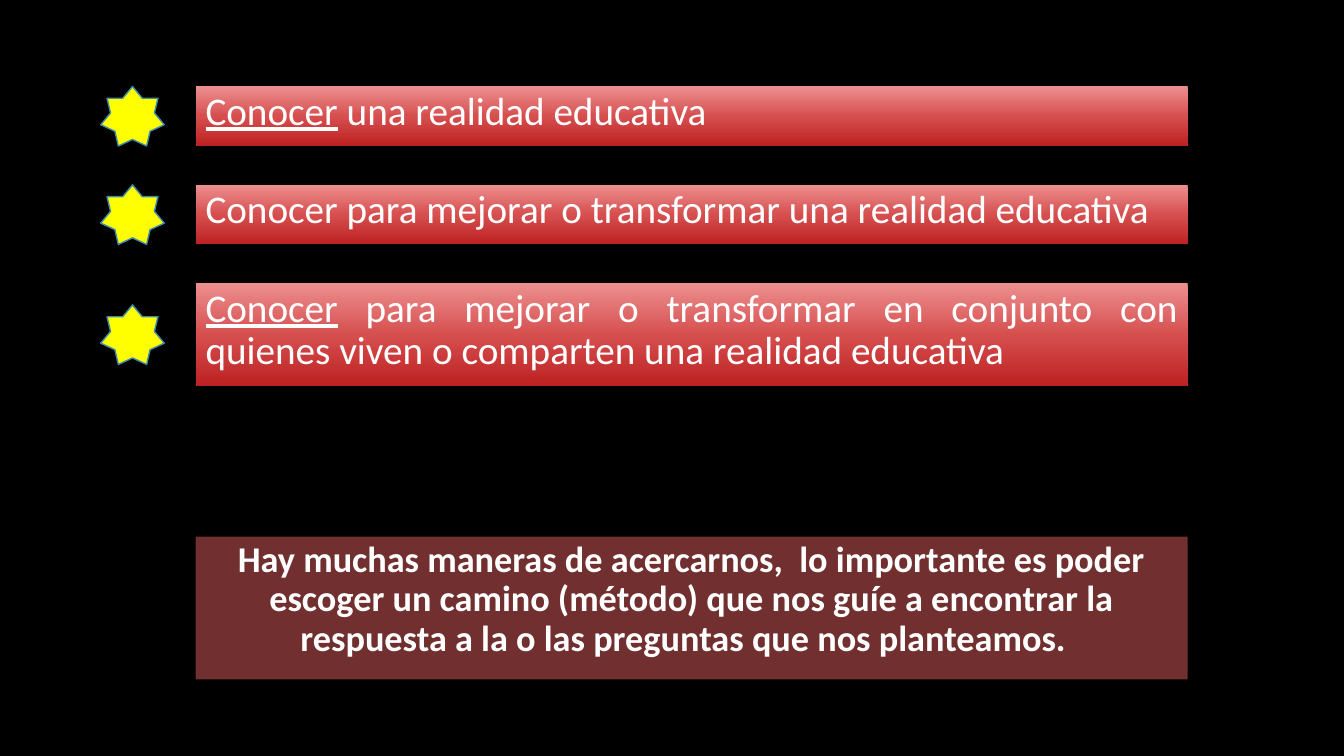
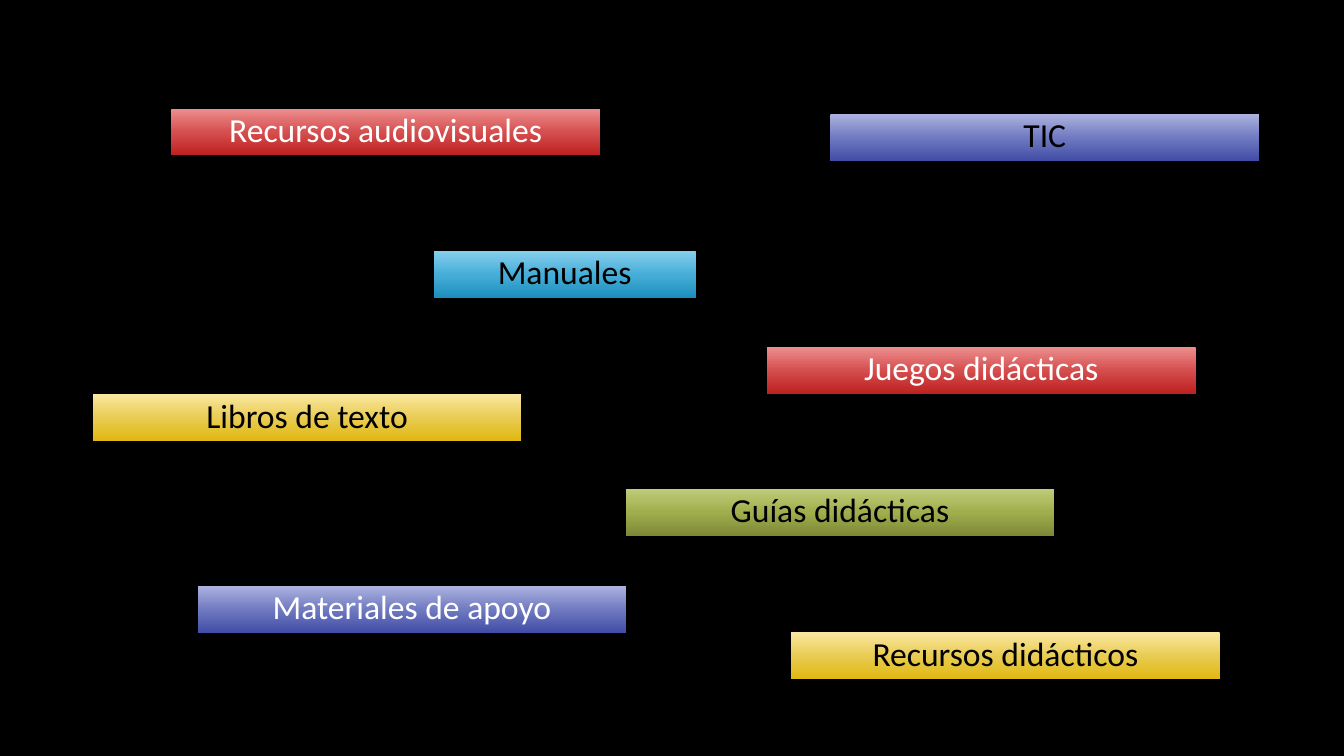
import copy

import lxml.etree
import pptx
import pptx.dml.color
import pptx.enum.shapes
import pptx.enum.text
import pptx.oxml.ns
import pptx.util

Cm = pptx.util.Cm
Pt = pptx.util.Pt
Shape = pptx.enum.shapes.MSO_SHAPE
Align = pptx.enum.text.PP_ALIGN
Fit = pptx.enum.text.MSO_AUTO_SIZE
qn = pptx.oxml.ns.qn

FONT = "Calibri"
BLACK, WHITE = "000000", "FFFFFF"
RED = ("ED8F8F", "D64F4F", "BD2121")
BLUE = ("87D0EE", "47AED8", "1D8FBD")
GOLD = ("FAE8A1", "E9CC54", "E0B810")
GREEN = ("C0CC79", "A0AE4D", "7D8936")
VIOLET = ("ADB3E0", "717BC1", "414DA7")

# Aims slide, in cm
LEFT, WIDTH, TOP, GAP = 4.93, 25, 2.18, 0.98
STAR_LEFT, STAR_W, STAR_H = 2.54, 1.6, 1.5
AIMS = [
    (1.5, "Conocer", " una realidad educativa"),
    (1.5, "", "Conocer para mejorar o transformar una realidad educativa"),
    (2.59, "Conocer", " para mejorar o transformar en conjunto con quienes viven "
                      "o comparten una realidad educativa"),
]
CLOSING = ("Hay muchas maneras de acercarnos,  lo importante es poder escoger un "
           "camino (método) que nos guíe a encontrar la respuesta a la o las "
           "preguntas que nos planteamos.  ")

# Resources slide, in cm: left, top, width, text, gradient, text colour
TAG_W, TAG_H = 10.8, 1.18
TAGS = [
    (4.32, 2.74, TAG_W, "Recursos audiovisuales", RED, WHITE),
    (10.93, 6.32, 6.6, "Manuales", BLUE, BLACK),
    (19.94, 15.93, TAG_W, "Recursos didácticos", GOLD, BLACK),
    (15.77, 12.32, TAG_W, "Guías didácticas", GREEN, BLACK),
    (2.34, 9.93, TAG_W, "Libros de texto", GOLD, BLACK),
    (19.33, 8.74, TAG_W, "Juegos didácticas", RED, WHITE),
    (4.98, 14.76, TAG_W, "Materiales de apoyo", VIOLET, WHITE),
    (20.93, 2.87, TAG_W, "TIC", VIOLET, BLACK),
]


def rgb(code):
    return pptx.dml.color.RGBColor.from_string(code)


def style(item, values):
    for name, value in values.items():
        setattr(item, name, value)


def solid(fill, code):
    fill.solid()
    fill.fore_color.rgb = rgb(code)


def fade(shape, codes):
    """Fill with evenly spaced colours from top to bottom."""
    fill = shape.fill
    fill.gradient()
    fill.gradient_angle = 270
    stops = shape.element.spPr.find(qn("a:gradFill")).find(qn("a:gsLst"))
    while len(stops) < len(codes):
        stops.append(copy.deepcopy(stops[0]))
    for i, (stop, code) in enumerate(zip(fill.gradient_stops, codes)):
        stop.position = i / (len(codes) - 1)
        stop.color.rgb = rgb(code)


def veil(shape, code, part):
    """Fill with a colour at the given percentage of opacity."""
    solid(shape.fill, code)
    color = shape.element.spPr.find(qn("a:solidFill"))[0]
    lxml.etree.SubElement(color, qn("a:alpha"), val=str(part * 1000))


def draw(slide, kind, left, top, width, height):
    shape = slide.shapes.add_shape(kind, Cm(left), Cm(top), Cm(width), Cm(height))
    shape.shadow.inherit = False
    shape.line.fill.background()
    return shape


def write(shape, runs, align, color, font, fit=Fit.NONE):
    """Set one paragraph from pairs of text and run format."""
    frame = shape.text_frame
    style(frame, {"word_wrap": True, "auto_size": fit,
                  "vertical_anchor": pptx.enum.text.MSO_ANCHOR.TOP})
    para = frame.paragraphs[0]
    style(para, {"alignment": align, "line_spacing": 0.9})
    for text, extra in runs:
        run = para.add_run()
        run.text = text
        style(run.font, {"name": FONT, **font, **extra})
        run.font.color.rgb = rgb(color)


def star(slide, middle):
    shape = draw(slide, Shape.STAR_7_POINT, STAR_LEFT, middle - STAR_H / 2,
                 STAR_W, STAR_H)
    solid(shape.fill, "FFFF00")
    solid(shape.line.fill, "408BA9")
    shape.line.width = Pt(1)


def aims(slide):
    top = TOP
    for height, verb, rest in AIMS:
        bar = draw(slide, Shape.RECTANGLE, LEFT, top, WIDTH, height)
        fade(bar, RED)
        runs = [(verb, {"underline": True})] if verb else []
        write(bar, runs + [(rest, {})], Align.JUSTIFY, WHITE, {"size": Pt(28)})
        star(slide, top + height / 2)
        top += height + GAP
    box = draw(slide, Shape.RECTANGLE, LEFT, 13.52, WIDTH, 3.6)
    veil(box, "E35F5F", 50)
    write(box, [(CLOSING, {})], Align.CENTER, WHITE,
          {"size": Pt(25.9), "bold": True})


def tags(slide):
    for left, top, width, text, codes, color in TAGS:
        tag = draw(slide, Shape.RECTANGLE, left, top, width, TAG_H)
        fade(tag, codes)
        write(tag, [(text, {})], Align.CENTER, color, {"size": Pt(24)},
              Fit.SHAPE_TO_FIT_TEXT)


def main():
    deck = pptx.Presentation()
    style(deck, {"slide_width": Cm(33.87), "slide_height": Cm(19.05)})
    solid(deck.slide_master.background.fill, BLACK)
    for build in (aims, tags):
        build(deck.slides.add_slide(deck.slide_layouts[6]))
    deck.save("out.pptx")


if __name__ == "__main__":
    main()
